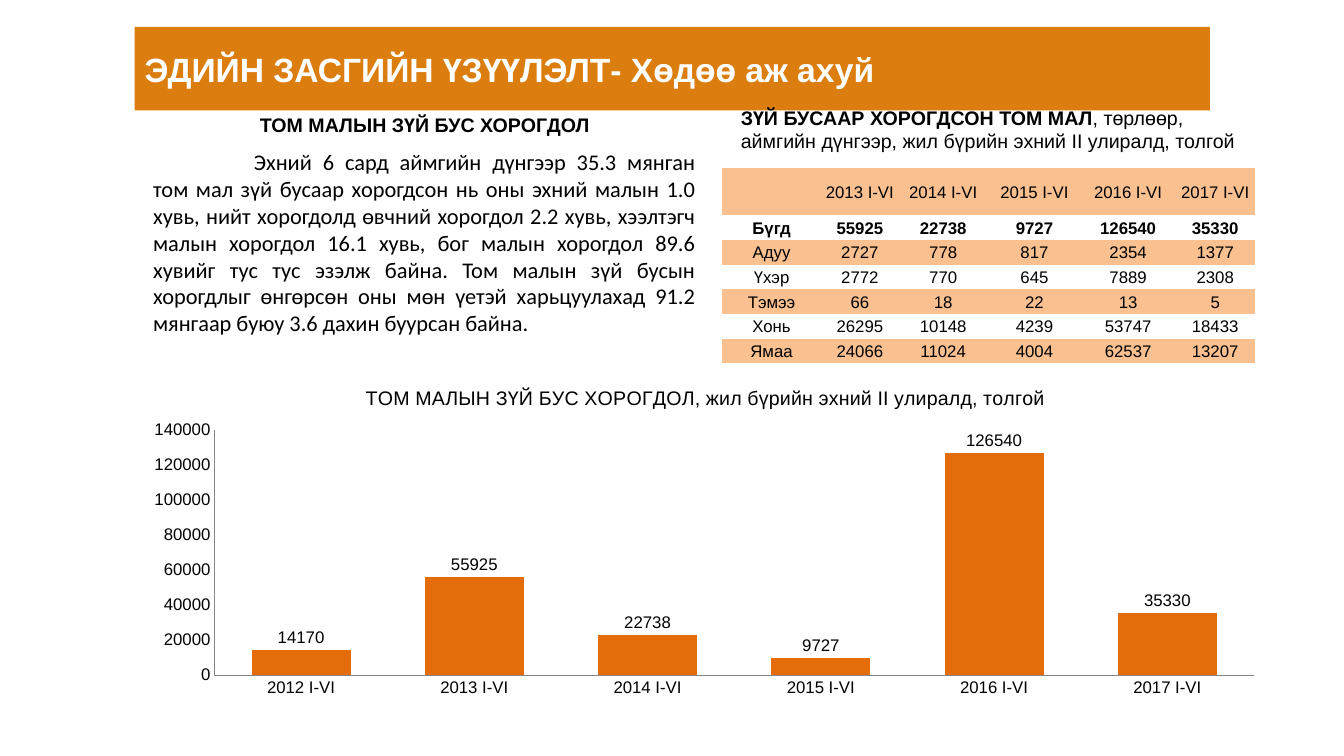
from dataclasses import dataclass

from lxml.etree import SubElement
from pptx import Presentation
from pptx.chart.data import CategoryChartData
from pptx.dml.color import RGBColor
from pptx.enum.chart import XL_CHART_TYPE, XL_LABEL_POSITION, XL_TICK_MARK
from pptx.enum.text import MSO_ANCHOR, MSO_AUTO_SIZE, PP_ALIGN
from pptx.oxml.ns import qn
from pptx.util import Cm, Pt


@dataclass(frozen=True)
class Theme:
    bar: str = "DC7D0F"
    band: str = "FAC090"
    column: str = "E46C0A"
    axis: str = "868686"
    ink: str = "000000"
    paper: str = "FFFFFF"
    head: int = 24
    body: int = 16
    label: int = 14
    small: int = 12
    sans: str = "Arial"
    prose: str = "Calibri"
    plain: str = "{2D5ABB26-0587-4C30-8999-92F81FD0307C}"


HEAD = "ЭДИЙН ЗАСГИЙН ҮЗҮҮЛЭЛТ- Хөдөө аж ахуй"
LOSS = "ТОМ МАЛЫН ЗҮЙ БУС ХОРОГДОЛ"
PROSE = (
    "Эхний 6 сард аймгийн дүнгээр 35.3 мянган том мал зүй бусаар хорогдсон нь "
    "оны эхний малын 1.0 хувь, нийт хорогдолд өвчний хорогдол 2.2 хувь, "
    "хээлтэгч малын хорогдол 16.1 хувь, бог малын хорогдол 89.6 хувийг тус тус "
    "эзэлж байна. Том малын зүй бусын хорогдлыг өнгөрсөн оны мөн үетэй "
    "харьцуулахад 91.2 мянгаар буюу 3.6 дахин буурсан байна."
)
YEARS = [f"{year} I-VI" for year in range(2012, 2018)]
TOTALS = [14170, 55925, 22738, 9727, 126540, 35330]
HERD = [
    ["", *YEARS[1:]],
    ["Бүгд", *TOTALS[1:]],
    ["Адуу", 2727, 778, 817, 2354, 1377],
    ["Үхэр", 2772, 770, 645, 7889, 2308],
    ["Тэмээ", 66, 18, 22, 13, 5],
    ["Хонь", 26295, 10148, 4239, 53747, 18433],
    ["Ямаа", 24066, 11024, 4004, 62537, 13207],
]


def put(target, values):
    for name, value in values.items():
        setattr(target, name, value)


def paint(fill, color):
    fill.solid()
    fill.fore_color.rgb = RGBColor.from_string(color)


class Page:
    def __init__(self, slide, theme):
        self.slide, self.theme = slide, theme

    def style(self, font, size, bold=False, face=None, color=None):
        put(font, {"name": face or self.theme.sans, "size": Pt(size), "bold": bold})
        font.color.rgb = RGBColor.from_string(color or self.theme.ink)

    def title(self, text, *box):
        shape = self.slide.shapes.title
        put(shape, dict(zip(("left", "top", "width", "height"), map(Cm, box))))
        paint(shape.fill, self.theme.bar)
        frame = shape.text_frame
        frame.text = text
        put(frame, {"vertical_anchor": MSO_ANCHOR.MIDDLE, "word_wrap": True,
                    "auto_size": MSO_AUTO_SIZE.NONE})
        line = frame.paragraphs[0]
        line.alignment = PP_ALIGN.JUSTIFY
        self.style(line.runs[0].font, self.theme.head, True, color=self.theme.paper)

    def text(self, parts, size, *box, face=None, align=PP_ALIGN.LEFT, indent=0):
        """Add one paragraph made of (text, bold) parts."""
        frame = self.slide.shapes.add_textbox(*map(Cm, box)).text_frame
        frame.word_wrap = True
        line = frame.paragraphs[0]
        line.alignment = align
        line._p.get_or_add_pPr().set("indent", str(Cm(indent)))
        for words, bold in parts:
            run = line.add_run()
            run.text = words
            self.style(run.font, size, bold, face)

    def table(self, data, left, top, widths, heights, size, pad=0,
              align=PP_ALIGN.LEFT, bold=(), bands=()):
        shape = self.slide.shapes.add_table(
            len(data), len(widths), Cm(left), Cm(top),
            Cm(sum(widths)), Cm(sum(heights)))
        grid = shape.table
        put(grid, {"first_row": False, "horz_banding": False})
        grid._tbl.tblPr.find(qn("a:tableStyleId")).text = self.theme.plain
        for col, width in zip(grid.columns, widths):
            col.width = Cm(width)
        for row, height in zip(grid.rows, heights):
            row.height = Cm(height)
        for r, row in enumerate(data):
            for c, value in enumerate(row):
                cell = grid.cell(r, c)
                put(cell, {"text": str(value), "vertical_anchor": MSO_ANCHOR.MIDDLE,
                           "margin_left": Cm(pad), "margin_right": Cm(pad),
                           "margin_top": Cm(pad), "margin_bottom": 0})
                line = cell.text_frame.paragraphs[0]
                line.alignment = align
                self.style(line.font, size, r in bold)
                if r in bands:
                    paint(cell.fill, self.theme.band)
                else:
                    cell.fill.background()

    def chart(self, head, cats, values, *box):
        theme = self.theme
        data = CategoryChartData()
        data.categories = cats
        data.add_series("Хорогдол", values)
        chart = self.slide.shapes.add_chart(
            XL_CHART_TYPE.COLUMN_CLUSTERED, *map(Cm, box), data).chart
        put(chart, {"has_legend": False, "has_title": True})
        self.style(chart.font, theme.small)
        frame = chart.chart_title.text_frame
        frame.text = head
        self.style(frame.paragraphs[0].runs[0].font, theme.label)
        chart.chart_title.include_in_layout = False
        for axis in (chart.category_axis, chart.value_axis):
            put(axis, {"has_major_gridlines": False,
                       "major_tick_mark": XL_TICK_MARK.NONE,
                       "minor_tick_mark": XL_TICK_MARK.NONE})
            self.style(axis.tick_labels.font, theme.small)
            axis.format.line.color.rgb = RGBColor.from_string(theme.axis)
        put(chart.value_axis, {"minimum_scale": 0, "maximum_scale": 140000,
                               "major_unit": 20000})
        plot = chart.plots[0]
        put(plot, {"gap_width": 75, "vary_by_categories": False,
                   "has_data_labels": True})
        put(plot.data_labels, {"show_value": True,
                               "position": XL_LABEL_POSITION.OUTSIDE_END})
        self.style(plot.data_labels.font, theme.small)
        paint(plot.series[0].format.fill, theme.column)
        self.frame(chart, x=0.07, y=0.18, w=0.91, h=0.73)

    def frame(self, chart, **sides):
        """Fix the inner plot area as shares of the chart."""
        area = chart._chartSpace.chart.plotArea
        layout = area.find(qn("c:layout"))
        if layout is None:
            layout = SubElement(area, qn("c:layout"))
            area.insert(0, layout)
        manual = SubElement(layout, qn("c:manualLayout"))
        rules = {"layoutTarget": "inner", "xMode": "edge", "yMode": "edge", **sides}
        for name, value in rules.items():
            SubElement(manual, qn(f"c:{name}")).set("val", str(value))


def main():
    deck = Presentation()
    put(deck, {"slide_width": Cm(33.87), "slide_height": Cm(19.05)})
    theme = Theme()
    page = Page(deck.slides.add_slide(deck.slide_layouts[5]), theme)
    page.title(HEAD, 3.39, 0.68, 27.1, 2.1)
    page.text([(PROSE, False)], theme.body, 3.61, 3.61, 14.17, 5.05,
              face=theme.prose, align=PP_ALIGN.JUSTIFY, indent=2.54)
    page.table([[LOSS]], 6.55, 2.74, [8.69], [0.84], theme.label, bold=[0])
    page.text([("ЗҮЙ БУСААР ХОРОГДСОН ТОМ МАЛ", True),
               (", төрлөөр, аймгийн дүнгээр, жил бүрийн эхний II улиралд, толгой",
                False)], theme.label, 18.42, 2.54, 13.34, 1.45)
    page.table(HERD, 18.2, 4.24, [2.49, 1.96, 2.24, 2.36, 2.36, 2.03],
               [1.19] + [0.62] * 6, theme.small, pad=0.03,
               align=PP_ALIGN.CENTER, bold=[1], bands=range(0, 7, 2))
    page.chart(f"{LOSS}, жил бүрийн эхний II улиралд, толгой", YEARS, TOTALS,
               3.39, 9.31, 28.79, 8.47)
    deck.save("out.pptx")


if __name__ == "__main__":
    main()
